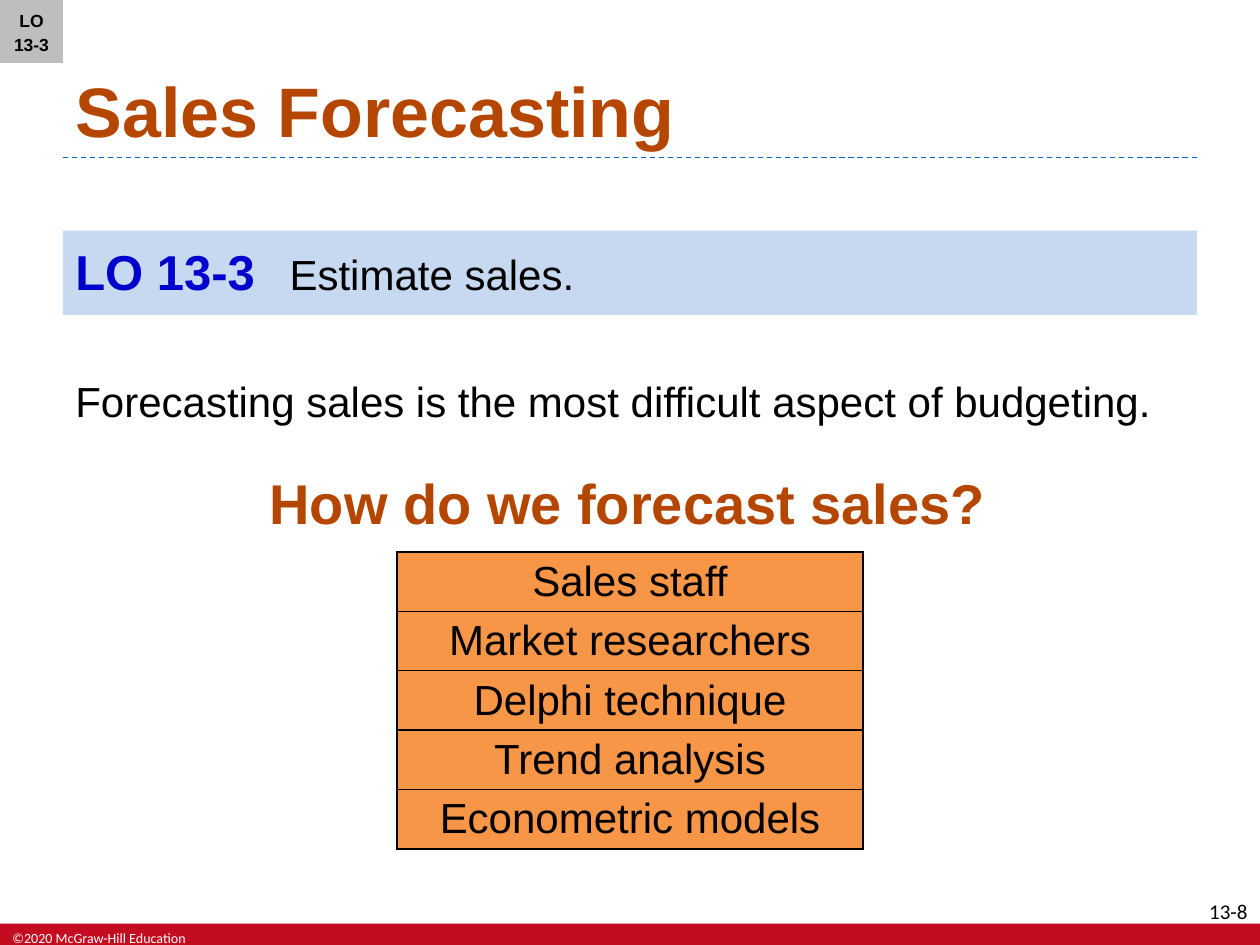
import pptx
import pptx.dml.color
import pptx.enum.dml
import pptx.enum.shapes
import pptx.enum.text
import pptx.oxml
import pptx.oxml.ns
import pptx.oxml.xmlchemy
import pptx.util
from pptx.util import Inches

RGBColor = pptx.dml.color.RGBColor
ALIGN = pptx.enum.text.PP_ALIGN
ANCHOR = pptx.enum.text.MSO_ANCHOR

BLACK = RGBColor(0, 0, 0)
WHITE = RGBColor(255, 255, 255)
RUST = RGBColor(0xB4, 0x46, 0x00)
BLUE = RGBColor(0x00, 0x00, 0xCC)
PALE_BLUE = RGBColor(0xC6, 0xD9, 0xF1)
ORANGE = RGBColor(0xF7, 0x96, 0x46)
GREY = RGBColor(0xBE, 0xBE, 0xBE)
RED = RGBColor(0xC3, 0x0C, 0x20)
RULE_BLUE = RGBColor(0x00, 0x64, 0xC8)

METHODS = ["Sales staff", "Market researchers", "Delphi technique",
           "Trend analysis", "Econometric models"]


def add_run(p, text, size, color=BLACK, bold=False, name="Arial"):
    r = p.add_run()
    r.text = text
    r.font.color.rgb = color
    formats = {"size": pptx.util.Pt(size), "bold": bold, "name": name}
    for key, value in formats.items():
        setattr(r.font, key, value)


def format_frame(tf, align=ALIGN.LEFT, **formats):
    defaults = {"word_wrap": True, "vertical_anchor": ANCHOR.TOP,
                "auto_size": pptx.enum.text.MSO_AUTO_SIZE.NONE,
                "margin_left": Inches(0.1), "margin_right": Inches(0.1),
                "margin_top": Inches(0.05), "margin_bottom": Inches(0.05)}
    for key, value in {**defaults, **formats}.items():
        setattr(tf, key, value)
    p = tf.paragraphs[0]
    p.alignment = align
    return p


def add_box(s, box, fill):
    sp = s.shapes.add_shape(pptx.enum.shapes.MSO_SHAPE.RECTANGLE, *map(Inches, box))
    sp.shadow.inherit = False
    sp.fill.solid()
    sp.fill.fore_color.rgb = fill
    sp.line.fill.background()
    return sp


def add_text(s, box, text, size, align=ALIGN.LEFT, top=0.05, **font):
    sp = s.shapes.add_textbox(*map(Inches, box))
    p = format_frame(sp.text_frame, align, margin_top=Inches(top))
    add_run(p, text, size, **font)


def add_footer(s, box):
    left, top, width, height = box
    add_box(s, box, RED)
    add_text(s, (left, top, 1.6, height), "©2020 McGraw-Hill Education", 8,
             color=WHITE, name="Calibri")
    add_text(s, (left + width - 0.7, top - 0.25, 0.7, 0.2), "13-8", 12,
             ALIGN.RIGHT, name="Calibri")


def add_title(s, box):
    left, top, width, height = box
    sp = s.shapes.title
    for key, value in zip(("left", "top", "width", "height"), box):
        setattr(sp, key, Inches(value))
    p = format_frame(sp.text_frame, vertical_anchor=ANCHOR.BOTTOM)
    add_run(p, "Sales Forecasting", 40, RUST, True)
    bottom = Inches(top + height)
    rule = s.shapes.add_connector(pptx.enum.shapes.MSO_CONNECTOR.STRAIGHT,
                                  Inches(left), bottom, Inches(left + width), bottom)
    rule.line.color.rgb = RULE_BLUE
    rule.line.width = pptx.util.Pt(0.75)
    rule.line.dash_style = pptx.enum.dml.MSO_LINE.DASH
    rule._element.spPr.append(pptx.oxml.xmlchemy.OxmlElement("a:effectLst"))


def add_objective(s, box):
    sp = add_box(s, box, PALE_BLUE)
    p = format_frame(sp.text_frame, margin_top=Inches(0.09))
    pPr = p._p.get_or_add_pPr()
    pPr.set("marL", str(Inches(1.7)))
    pPr.set("indent", str(-Inches(1.7)))
    add_run(p, "LO 13-3\t", 28, BLUE, True)
    add_run(p, "Estimate sales.", 24)


def add_badge(s, box):
    sp = add_box(s, box, GREY)
    p = format_frame(sp.text_frame, ALIGN.CENTER, vertical_anchor=ANCHOR.MIDDLE,
                     margin_left=Inches(0.05), margin_right=Inches(0.05))
    p.line_spacing = 1.1
    add_run(p, "LO 13-3", 10, bold=True)


def add_border(cell):
    tcPr = cell._tc.get_or_add_tcPr()
    for i, side in enumerate(("lnL", "lnR", "lnT", "lnB")):
        tcPr.insert(i, pptx.oxml.parse_xml(
            f'<a:{side} {pptx.oxml.ns.nsdecls("a")} w="{pptx.util.Pt(1)}">'
            f'<a:solidFill><a:srgbClr val="{BLACK}"/></a:solidFill></a:{side}>'))


def add_methods(s, box):
    frame = s.shapes.add_table(len(METHODS), 1, *map(Inches, box))
    table = frame.table
    table.first_row = table.horz_banding = False
    for row, method in zip(table.rows, METHODS):
        cell = row.cells[0]
        cell.fill.solid()
        cell.fill.fore_color.rgb = ORANGE
        cell.margin_top = cell.margin_bottom = Inches(0.04)
        cell.vertical_anchor = ANCHOR.MIDDLE
        p = cell.text_frame.paragraphs[0]
        p.alignment = ALIGN.CENTER
        add_run(p, method, 24)
        add_border(cell)


def main():
    prs = pptx.Presentation()
    prs.slide_width, prs.slide_height = Inches(10), Inches(7.5)
    s = prs.slides.add_slide(prs.slide_layouts[5])
    add_footer(s, (0, 7.33, 10, 0.17))
    add_title(s, (0.5, 0.05, 9, 1.2))
    add_objective(s, (0.5, 1.83, 9, 0.67))
    add_text(s, (0.5, 2.89, 8.83, 0.61),
             "Forecasting sales is the most difficult aspect of budgeting.", 24, top=0.09)
    add_text(s, (2.04, 3.63, 5.92, 0.62), "How do we forecast sales?", 32,
             top=0.09, color=RUST, bold=True)
    add_methods(s, (3.15, 4.38, 3.7, 2.36))
    add_badge(s, (0, 0, 0.5, 0.5))
    prs.save("out.pptx")


if __name__ == "__main__":
    main()
